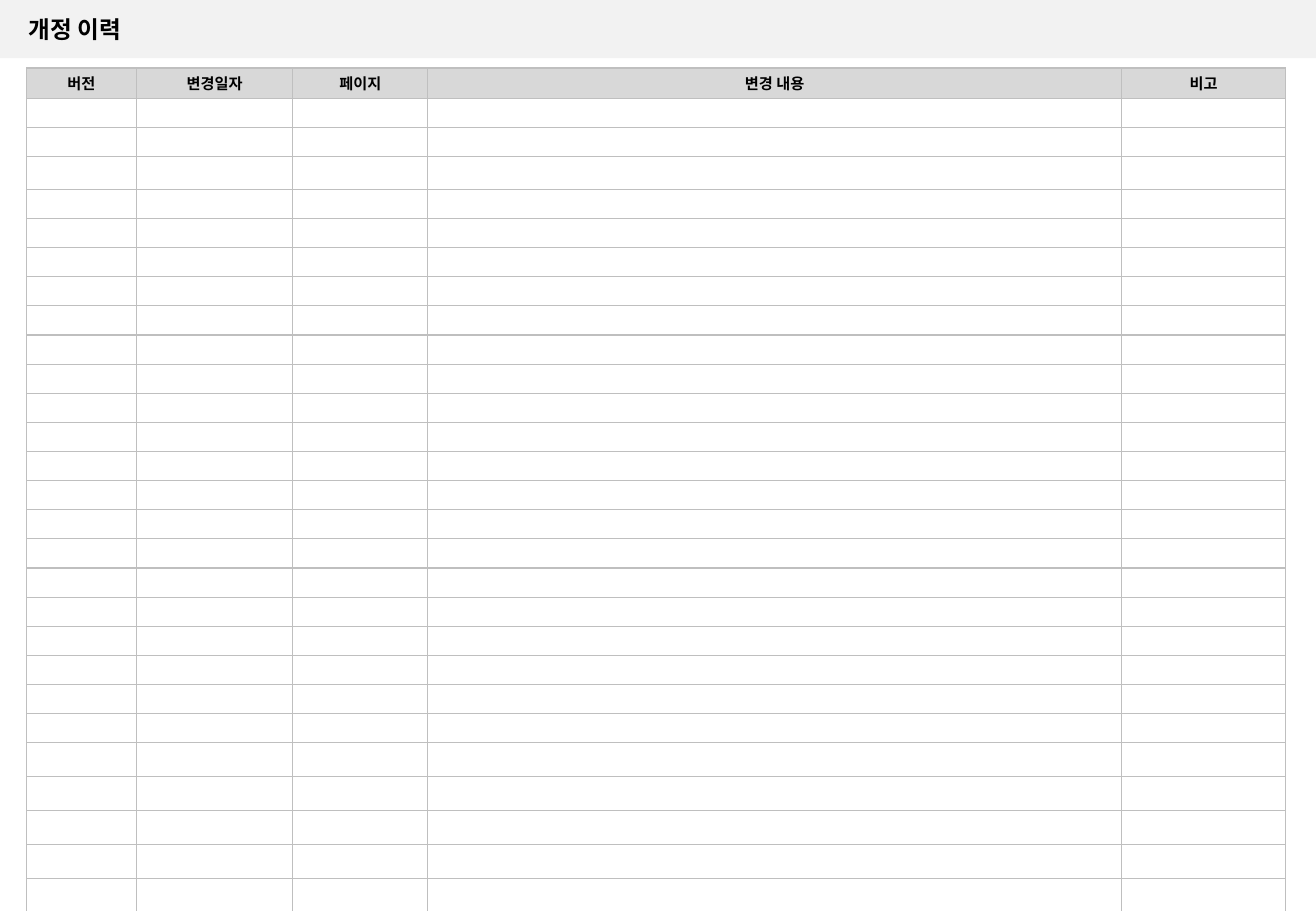
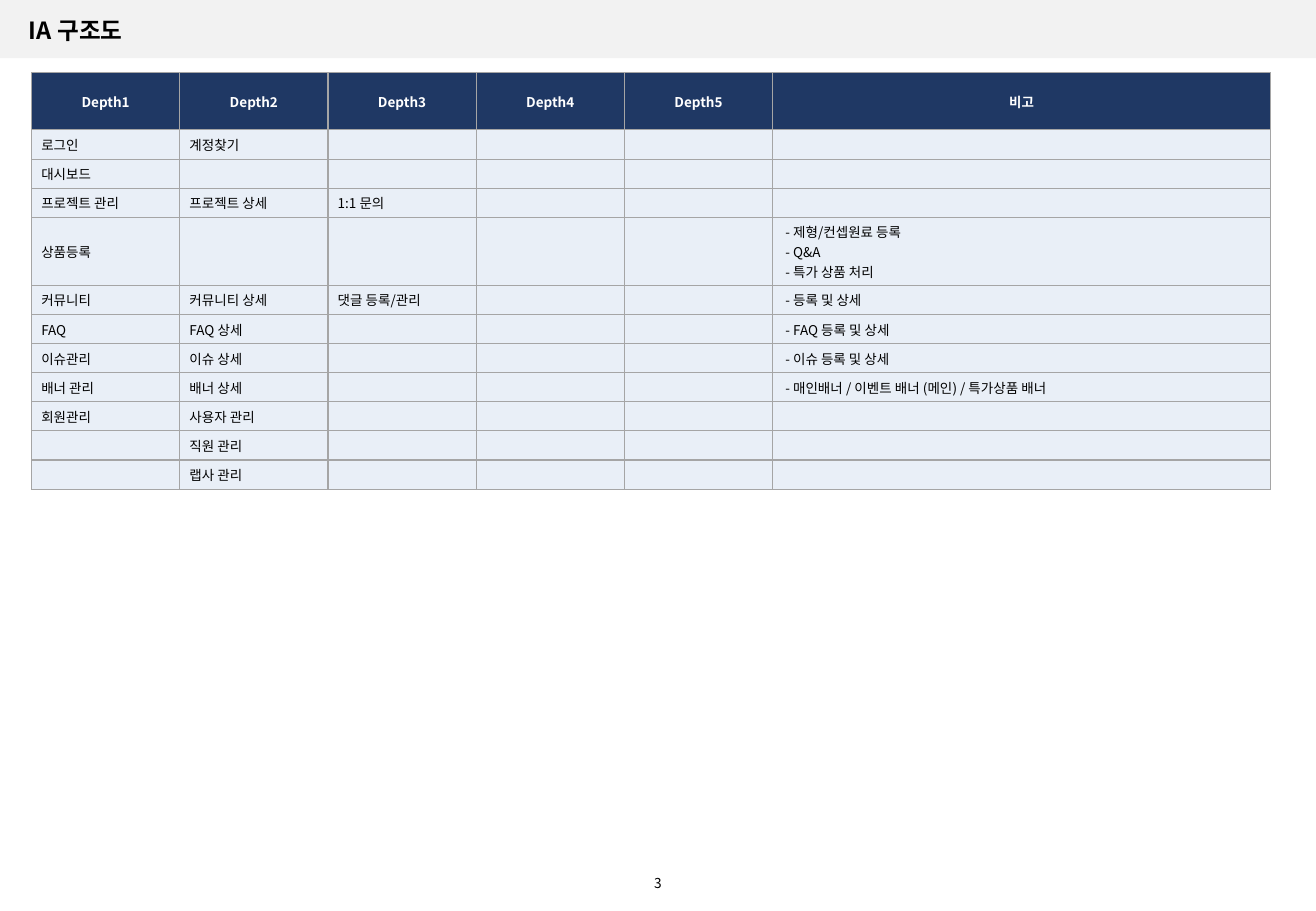
from dataclasses import dataclass

from lxml import etree
from pptx import Presentation
from pptx.dml.color import RGBColor
from pptx.enum.shapes import MSO_SHAPE
from pptx.enum.text import MSO_ANCHOR, PP_ALIGN
from pptx.oxml.ns import qn
from pptx.slide import Slide
from pptx.table import _Cell
from pptx.text.text import _Paragraph
from pptx.util import Inches, Pt

RECT = MSO_SHAPE.RECTANGLE
TOP, MIDDLE = MSO_ANCHOR.TOP, MSO_ANCHOR.MIDDLE
LEFT, CENTER = PP_ALIGN.LEFT, PP_ALIGN.CENTER

SLIDE_W, SLIDE_H = 10.83, 7.5
BAND_H = 0.48


@dataclass(frozen=True)
class Theme:
    font: str = "Noto Sans CJK KR"
    text: str = "000000"
    white: str = "FFFFFF"
    band: str = "F2F2F2"
    gray_head: str = "D8D8D8"
    gray_line: str = "BFBFBF"
    navy_head: str = "1F3864"
    pale_body: str = "E9EFF7"
    dark_line: str = "A5A5A5"
    title_pt: float = 14
    history_pt: float = 9
    structure_pt: float = 8
    page_pt: float = 8.1
    line_pt: float = 0.75


THEME = Theme()


@dataclass(frozen=True)
class TableStyle:
    head_fill: str
    head_text: str
    body_fill: str
    line: str
    size: float
    margin_x: float
    margin_y: float


@dataclass(frozen=True)
class TableSpec:
    left: float
    top: float
    cols: list[float]
    heights: list[float]
    rows: list[list[str]]
    style: TableStyle


@dataclass(frozen=True)
class Page:
    title: str
    table: TableSpec
    spacing: float = 1.0
    number: str = ""


HISTORY_STYLE = TableStyle(THEME.gray_head, THEME.text, THEME.white,
                           THEME.gray_line, THEME.history_pt, 0.03, 0.03)
STRUCTURE_STYLE = TableStyle(THEME.navy_head, THEME.white, THEME.pale_body,
                             THEME.dark_line, THEME.structure_pt, 0.08, 0.04)

HISTORY = TableSpec(
    0.22, 0.56, [0.9, 1.29, 1.11, 5.71, 1.35],
    [0.25] + [0.24] * 2 + [0.27] + [0.24] * 19 + [0.28] * 5,
    [["버전", "변경일자", "페이지", "변경 내용", "비고"]],
    HISTORY_STYLE)

STRUCTURE = TableSpec(
    0.26, 0.6, [1.22] * 5 + [4.1],
    [0.47] + [0.24] * 3 + [0.56] + [0.24] * 7,
    [
        [f"Depth{n}" for n in range(1, 6)] + ["비고"],
        ["로그인", "계정찾기"],
        ["대시보드"],
        ["프로젝트 관리", "프로젝트 상세", "1:1 문의"],
        ["상품등록", "", "", "", "",
         " - 제형/컨셉원료 등록\n - Q&A\n - 특가 상품 처리"],
        ["커뮤니티", "커뮤니티 상세", "댓글 등록/관리", "", "", " - 등록 및 상세"],
        ["FAQ", "FAQ 상세", "", "", "", " - FAQ 등록 및 상세"],
        ["이슈관리", "이슈 상세", "", "", "", " - 이슈 등록 및 상세"],
        ["배너 관리", "배너 상세", "", "", "",
         " - 매인배너 / 이벤트 배너 (메인) / 특가상품 배너"],
        ["회원관리", "사용자 관리"],
        ["", "직원 관리"],
        ["", "랩사 관리"],
    ],
    STRUCTURE_STYLE)

PAGES = [
    Page("개정 이력", HISTORY),
    Page("IA 구조도", STRUCTURE, spacing=1.1, number="3"),
]


def add_run(p: _Paragraph, text: str, size: float, color: str, bold: bool = False) -> None:
    r = p.add_run()
    r.text = text
    r.font.size = Pt(size)
    r.font.bold = bold
    r.font.name = THEME.font
    r.font.color.rgb = RGBColor.from_string(color)
    ea = etree.SubElement(r.font._element, qn("a:ea"))
    ea.set("typeface", THEME.font)


def add_text(slide: Slide, box: tuple[float, float, float, float], text: str, size: float,
             align: PP_ALIGN = LEFT, anchor: MSO_ANCHOR = TOP,
             bold: bool = False, spacing: float = 1.0) -> None:
    tf = slide.shapes.add_textbox(*map(Inches, box)).text_frame
    tf.word_wrap = True
    tf.vertical_anchor = anchor
    p = tf.paragraphs[0]
    p.alignment = align
    p.line_spacing = spacing
    add_run(p, text, size, THEME.text, bold)


def add_frame(slide: Slide, page: Page) -> None:
    """Draw the title band, the title and the page number."""
    sp = slide.shapes.add_shape(RECT, 0, 0, Inches(SLIDE_W), Inches(BAND_H))
    sp.shadow.inherit = False
    sp.fill.solid()
    sp.fill.fore_color.rgb = RGBColor.from_string(THEME.band)
    sp.line.fill.background()
    add_text(slide, (0.14, 0.04, 10.32, 0.4), page.title, THEME.title_pt,
             anchor=MIDDLE, bold=True, spacing=page.spacing)
    if page.number:
        width = 0.47
        add_text(slide, ((SLIDE_W - width) / 2, 7.15, width, 0.26), page.number,
                 THEME.page_pt, align=CENTER)


def set_borders(cell: _Cell, color: str) -> None:
    tc_pr = cell._tc.get_or_add_tcPr()
    for side in ("lnL", "lnR", "lnT", "lnB"):
        ln = etree.SubElement(tc_pr, qn(f"a:{side}"), w=str(Pt(THEME.line_pt)))
        fill = etree.SubElement(ln, qn("a:solidFill"))
        etree.SubElement(fill, qn("a:srgbClr"), val=color)


def fill_cell(cell: _Cell, text: str, style: TableStyle, head: bool) -> None:
    set_borders(cell, style.line)
    cell.fill.solid()
    cell.fill.fore_color.rgb = RGBColor.from_string(
        style.head_fill if head else style.body_fill)
    cell.margin_left = cell.margin_right = Inches(style.margin_x)
    cell.margin_top = cell.margin_bottom = Inches(style.margin_y)
    cell.vertical_anchor = MIDDLE
    tf = cell.text_frame
    for i, line in enumerate(text.split("\n")):
        p = tf.add_paragraph() if i else tf.paragraphs[0]
        p.alignment = CENTER if head else LEFT
        if line:
            add_run(p, line, style.size, style.head_text if head else THEME.text, head)
        else:
            etree.SubElement(p._p, qn("a:endParaRPr"), sz=str(Pt(style.size).centipoints))


def add_table(slide: Slide, spec: TableSpec) -> None:
    table = slide.shapes.add_table(
        len(spec.heights), len(spec.cols), Inches(spec.left), Inches(spec.top),
        Inches(sum(spec.cols)), Inches(sum(spec.heights))).table
    table.first_row = table.horz_banding = False
    for col, width in zip(table.columns, spec.cols):
        col.width = Inches(width)
    for i, height in enumerate(spec.heights):
        table.rows[i].height = Inches(height)
        texts = spec.rows[i] if i < len(spec.rows) else []
        for j in range(len(spec.cols)):
            text = texts[j] if j < len(texts) else ""
            fill_cell(table.cell(i, j), text, spec.style, head=i == 0)


def main() -> None:
    prs = Presentation()
    prs.slide_width, prs.slide_height = Inches(SLIDE_W), Inches(SLIDE_H)
    blank = prs.slide_layouts[6]
    for page in PAGES:
        slide = prs.slides.add_slide(blank)
        add_frame(slide, page)
        add_table(slide, page.table)
    prs.save("out.pptx")


if __name__ == "__main__":
    main()
